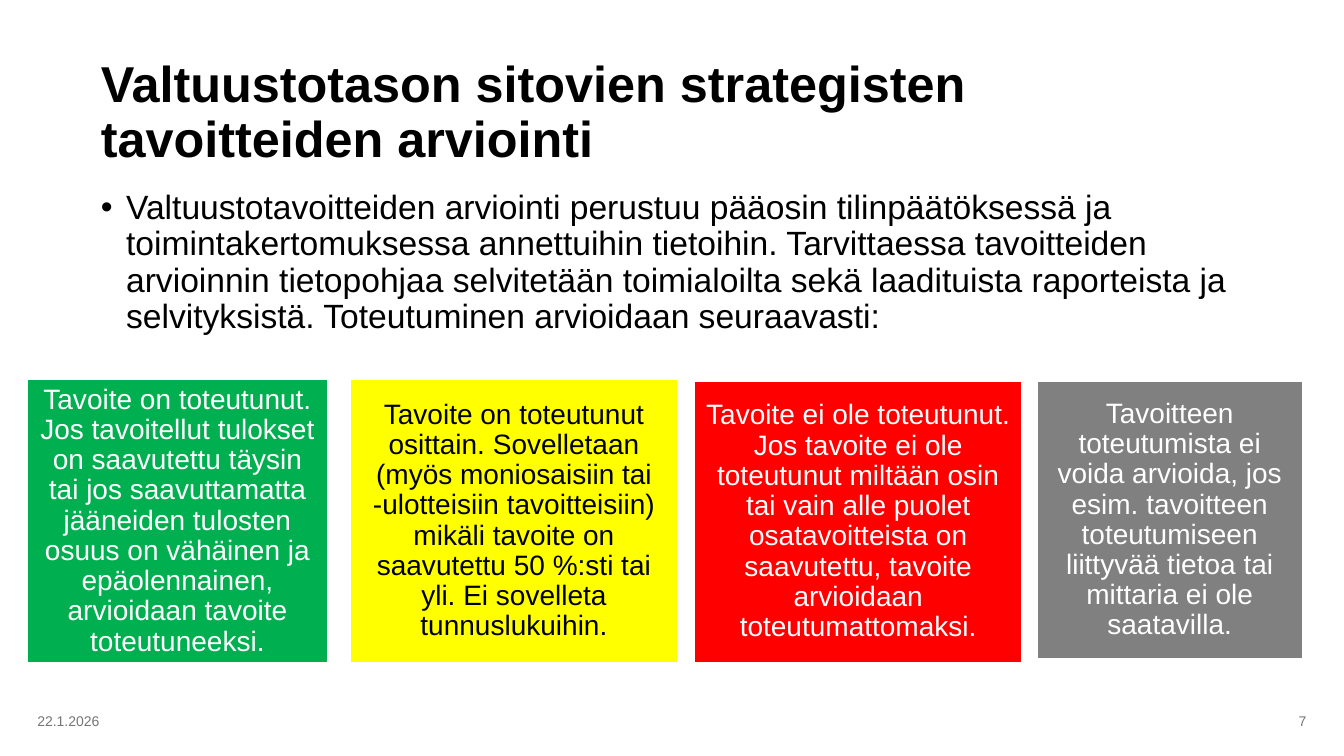
from lxml import etree
from pptx import Presentation, util as u
from pptx.dml.color import RGBColor
from pptx.enum import shapes, text
from pptx.oxml import ns

COLOURS = {
    "black": "000000",
    "white": "FFFFFF",
    "footer": "767676",
    "green": "00B050",
    "yellow": "FFFF00",
    "red": "FF0000",
    "grey": "808080",
}

TITLE = "Valtuustotason sitovien strategisten tavoitteiden arviointi"
INTRODUCTION = (
    "Valtuustotavoitteiden arviointi perustuu pääosin tilinpäätöksessä ja "
    "toimintakertomuksessa annettuihin tietoihin. Tarvittaessa tavoitteiden "
    "arvioinnin tietopohjaa selvitetään toimialoilta sekä laadituista "
    "raporteista ja selvityksistä. Toteutuminen arvioidaan seuraavasti:"
)
RATINGS = [
    ("green", "white", (0.69, 9.55, 7.57, 7.16),
     "Tavoite on toteutunut. Jos tavoitellut tulokset on saavutettu täysin "
     "tai jos saavuttamatta jääneiden tulosten osuus on vähäinen ja "
     "epäolennainen, arvioidaan tavoite toteutuneeksi."),
    ("yellow", "black", (8.84, 9.55, 8.23, 7.16),
     "Tavoite on toteutunut osittain. Sovelletaan (myös moniosaisiin tai "
     "-ulotteisiin tavoitteisiin) mikäli tavoite on saavutettu 50 %:sti tai "
     "yli. Ei sovelleta tunnuslukuihin."),
    ("red", "white", (17.5, 9.6, 8.26, 7.09),
     "Tavoite ei ole toteutunut. Jos tavoite ei ole toteutunut miltään osin "
     "tai vain alle puolet osatavoitteista on saavutettu, tavoite arvioidaan "
     "toteutumattomaksi."),
    ("grey", "white", (26.14, 9.6, 6.68, 7.01),
     "Tavoitteen toteutumista ei voida arvioida, jos esim. tavoitteen "
     "toteutumiseen liittyvää tietoa tai mittaria ei ole saatavilla."),
]


def colour(name):
    return RGBColor.from_string(COLOURS[name])


def lengths(box):
    return [u.Cm(value) for value in box]


def write(shape, content, size, colour_name, align=text.PP_ALIGN.LEFT,
          anchor=text.MSO_ANCHOR.MIDDLE, margins=(0.2, 0.1), spacing=0.9, bold=False):
    frame = shape.text_frame
    frame.text = content
    frame.word_wrap = True
    frame.auto_size = text.MSO_AUTO_SIZE.NONE
    frame.vertical_anchor = anchor
    frame.margin_left = frame.margin_right = u.Cm(margins[0])
    frame.margin_top = frame.margin_bottom = u.Cm(margins[1])
    paragraph = frame.paragraphs[0]
    paragraph.alignment = align
    paragraph.line_spacing = spacing
    for run in paragraph.runs:
        run.font.name = "Arial"
        run.font.size = u.Pt(size)
        run.font.bold = bold
        run.font.color.rgb = colour(colour_name)
    return paragraph


def add_title(slide):
    title = slide.shapes.title
    title.left, title.top, title.width, title.height = lengths((2.34, 1.02, 27.99, 3.68))
    write(title, TITLE, 36, "black", bold=True)


def add_introduction(slide):
    shape = slide.shapes.add_textbox(*lengths((2.34, 4.7, 29.21, 12.95)))
    paragraph = write(shape, INTRODUCTION, 24, "black", anchor=text.MSO_ANCHOR.TOP)
    properties = paragraph._p.get_or_add_pPr()
    properties.set("marL", str(u.Cm(0.64)))
    properties.set("indent", str(-u.Cm(0.64)))
    etree.SubElement(properties, ns.qn("a:buFont")).set("typeface", "Arial")
    etree.SubElement(properties, ns.qn("a:buChar")).set("char", "•")


def add_rating(slide, fill_name, font_name, box, content):
    shape = slide.shapes.add_shape(shapes.MSO_SHAPE.RECTANGLE, *lengths(box))
    shape.shadow.inherit = False
    shape.fill.solid()
    shape.fill.fore_color.rgb = colour(fill_name)
    shape.line.color.rgb = colour("white")
    shape.line.width = u.Pt(1)
    write(shape, content, 20, font_name, text.PP_ALIGN.CENTER, margins=(0.2, 0.2))


def add_footer(slide, content, left, width, align):
    shape = slide.shapes.add_textbox(*lengths((left, 17.65, width, 1.02)))
    write(shape, content, 10, "footer", align, margins=(0.25, 0.13), spacing=1.0)


def main():
    presentation = Presentation()
    presentation.slide_width, presentation.slide_height = lengths((33.87, 19.05))
    slide = presentation.slides.add_slide(presentation.slide_layouts.get_by_name("Title Only"))
    add_title(slide)
    add_introduction(slide)
    for rating in RATINGS:
        add_rating(slide, *rating)
    add_footer(slide, "22.1.2026", 0.69, 3.81, text.PP_ALIGN.LEFT)
    add_footer(slide, "7", 25.55, 7.62, text.PP_ALIGN.RIGHT)
    presentation.save("out.pptx")


if __name__ == "__main__":
    main()
